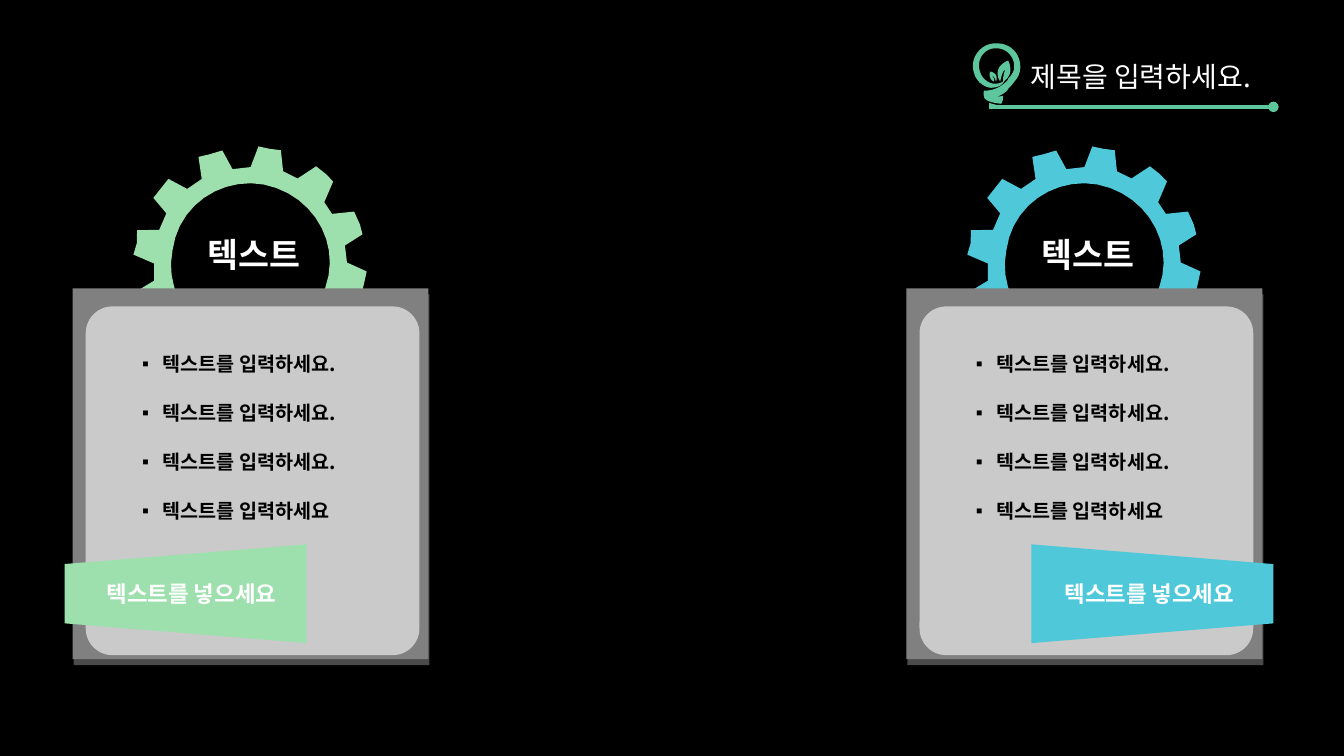
from lxml.etree import SubElement
from pptx import Presentation
from pptx.dml.color import RGBColor
from pptx.enum.shapes import MSO_CONNECTOR, MSO_SHAPE
from pptx.enum.text import MSO_ANCHOR, MSO_AUTO_SIZE, PP_ALIGN
from pptx.oxml.ns import qn
from pptx.util import Emu, Pt

EMU_PER_PX = 9144  # 100 px to the inch
SLIDE_SIZE = (1333, 750)
FONT = "Noto Sans CJK KR"
BLACK, WHITE, GREY, BULB_GREEN = "000000", "FFFFFF", "808080", "5EC69C"

TITLE = "제목을 입력하세요."
HEADING = "텍스트"
BULLETS = ["텍스트를 입력하세요."] * 3 + ["텍스트를 입력하세요"]
RIBBON = "텍스트를 넣으세요"

# Places inside a panel are those of the left one; shift moves the right one.
PANELS = [
    {"shift": 0, "color": "9DE0AD", "ribbon_left": 135, "ribbon_turn": 90, "label_left": 63},
    {"shift": 827, "color": "4FC9D9", "ribbon_left": 267, "ribbon_turn": 270, "label_left": 186},
]

GEAR_TEETH = [
    (209, 371), (222, 372), (233, 376), (243, 356), (258, 355), (270, 374), (280, 371),
    (291, 369), (290, 347), (304, 338), (322, 349), (330, 340), (339, 331), (327, 315),
    (335, 299), (356, 300), (360, 287), (363, 276), (344, 266), (343, 249), (361, 239),
    (359, 229), (354, 216), (332, 217), (325, 205), (335, 185), (328, 177), (319, 169),
    (300, 180), (286, 172), (285, 151), (274, 149), (263, 146), (254, 166), (236, 167),
    (227, 148), (214, 151), (203, 153), (205, 175), (190, 184), (172, 173), (164, 182),
    (156, 191), (168, 207), (160, 223), (138, 222), (137, 235), (133, 246), (153, 256),
    (152, 273), (135, 282), (138, 293), (141, 306), (162, 305), (172, 317), (160, 337),
    (169, 345), (178, 353), (195, 342), (210, 349),
]
# Curved outlines: a start point, then two control points and an end point per curve.
GEAR_HOLE = ((172, 244), [
    (180, 200, 224, 174, 266, 184), (309, 195, 335, 237, 325, 278),
    (314, 322, 273, 348, 229, 338), (187, 327, 161, 285, 172, 244)])
BULB_PARTS = [
    # small leaf
    ((986, 81), [(986, 81, 980, 79, 982, 71), (982, 71, 991, 72, 988, 81),
                 (988, 81, 986, 75, 984, 75), (984, 75, 987, 79, 986, 81)]),
    # large leaf
    ((995, 81), [(995, 81, 1007, 75, 1000, 60), (1000, 60, 983, 66, 992, 81),
                 (992, 81, 994, 70, 997, 69), (997, 69, 994, 78, 995, 81)]),
    # glass
    ((1006, 81), [
        (1010, 77, 1012, 72, 1012, 66), (1012, 53, 1002, 43, 989, 43),
        (976, 42, 965, 53, 965, 65), (965, 71, 967, 77, 971, 81),
        (971, 82, 971, 82, 972, 82), (972, 82, 978, 88, 985, 87),
        (996, 86, 997, 78, 997, 78), (997, 78, 996, 82, 989, 83),
        (981, 84, 976, 78, 976, 78), (976, 78, 976, 78, 975, 77),
        (973, 74, 971, 70, 971, 65), (971, 55, 979, 47, 989, 48),
        (998, 48, 1006, 56, 1006, 66), (1006, 71, 1003, 75, 1000, 78),
        (1000, 79, 999, 80, 998, 81), (994, 85, 987, 90, 976, 90),
        (976, 90, 975, 95, 977, 98), (977, 98, 987, 100, 999, 90),
        (999, 89, 1000, 89, 1000, 88), (1002, 86, 1005, 83, 1006, 81)]),
    # socket
    ((976, 90), [(976, 90, 986, 98, 995, 95), (995, 95, 995, 101, 993, 103),
                 (993, 103, 980, 102, 977, 98), (977, 98, 975, 95, 976, 90)]),
    # tip
    ((981, 102), [(981, 102, 989, 105, 992, 104), (992, 104, 991, 108, 986, 107),
                  (980, 107, 981, 102, 981, 102)]),
]


def px(length):
    return Emu(round(length * EMU_PER_PX))


def rgb(color):
    return RGBColor.from_string(color)


def trace(start, curves, steps=10):
    """Return the points along a chain of cubic Bezier curves."""
    points = [start]
    for x1, y1, x2, y2, x3, y3 in curves:
        x0, y0 = points[-1]
        for step in range(1, steps + 1):
            t = step / steps
            a, b, c, d = (1 - t) ** 3, 3 * t * (1 - t) ** 2, 3 * t * t * (1 - t), t ** 3
            points.append((a * x0 + b * x1 + c * x2 + d * x3,
                           a * y0 + b * y1 + c * y2 + d * y3))
    return points


def paint(shape, color, opacity=100):
    shape.shadow.inherit = False
    shape.fill.solid()
    shape.fill.fore_color.rgb = rgb(color)
    shape.line.fill.background()
    if opacity < 100:
        color_element = shape.fill._xPr.find(qn("a:solidFill"))[0]
        SubElement(color_element, qn("a:alpha"), val=str(opacity * 1000))


def add_outline(slide, contours, color, shift=0):
    contours = [[(px(x + shift), px(y)) for x, y in contour] for contour in contours]
    builder = slide.shapes.build_freeform(*contours[0][0], scale=1.0)
    builder.add_line_segments(contours[0][1:], close=True)
    for contour in contours[1:]:
        builder.move_to(*contour[0])
        builder.add_line_segments(contour[1:], close=True)
    shape = builder.convert_to_shape()
    paint(shape, color)
    return shape


def add_block(slide, preset, box, color, opacity=100):
    shape = slide.shapes.add_shape(preset, *map(px, box))
    paint(shape, color, opacity)
    return shape


def place(shape, box):
    shape.left, shape.top, shape.width, shape.height = map(px, box)


def write(paragraph, text, size, color, bold):
    run = paragraph.add_run()
    run.text = text
    run.font.size = Pt(size)
    run.font.bold = bold
    run.font.name = FONT
    run.font.color.rgb = rgb(color)
    SubElement(run._r.get_or_add_rPr(), qn("a:ea"), typeface=FONT)


def add_label(slide, box, text, size):
    frame = slide.shapes.add_textbox(*map(px, box)).text_frame
    frame.word_wrap = True
    frame.vertical_anchor = MSO_ANCHOR.MIDDLE
    frame.paragraphs[0].alignment = PP_ALIGN.CENTER
    write(frame.paragraphs[0], text, size, WHITE, True)


def fill_list(body, box):
    place(body, box)
    frame = body.text_frame
    frame.word_wrap = True
    frame.auto_size = MSO_AUTO_SIZE.NONE
    for index, text in enumerate(BULLETS):
        paragraph = frame.add_paragraph() if index else frame.paragraphs[0]
        paragraph.line_spacing = 1.5
        paragraph.space_before = Pt(10 if index else 0)
        properties = paragraph._p.get_or_add_pPr()
        properties.set("marL", str(px(20)))
        properties.set("indent", str(-px(20)))
        SubElement(properties, qn("a:buChar"), char="▪")
        write(paragraph, text, 14, BLACK, True)


def add_panel(slide, body, shift, color, ribbon_left, ribbon_turn, label_left):
    gear = add_outline(slide, [GEAR_TEETH, trace(*GEAR_HOLE)], color, shift)
    gear.rotation = 356.7
    add_block(slide, MSO_SHAPE.RECTANGLE, (72 + shift, 286, 353, 368), GREY)
    add_block(slide, MSO_SHAPE.RECTANGLE, (73 + shift, 292, 353, 368), GREY, 59)
    card = add_block(slide, MSO_SHAPE.ROUNDED_RECTANGLE, (85 + shift, 304, 331, 346), WHITE, 59)
    card.adjustments[0] = 0.08
    ribbon = add_block(slide, MSO_SHAPE.FLOWCHART_MANUAL_OPERATION,
                       (ribbon_left + shift, 469, 98, 240), color)
    ribbon.rotation = ribbon_turn
    slide.shapes._spTree.append(body._element)  # bring the list above the card
    fill_list(body, (131 + shift, 332, 248, 208))
    add_label(slide, (label_left + shift, 559, 254, 60), RIBBON, 16)
    add_label(slide, (125 + shift, 222, 254, 60), HEADING, 24)


def add_title(slide):
    title = slide.shapes.title
    place(title, (1012, 54, 261, 44))
    frame = title.text_frame
    frame.word_wrap = False
    frame.auto_size = MSO_AUTO_SIZE.SHAPE_TO_FIT_TEXT
    frame.vertical_anchor = MSO_ANCHOR.TOP
    frame.paragraphs[0].alignment = PP_ALIGN.LEFT
    write(frame.paragraphs[0], TITLE, 20, WHITE, False)


def add_title_line(slide):
    line = slide.shapes.add_connector(MSO_CONNECTOR.STRAIGHT, px(981), px(106), px(1263), px(106))
    line.line.color.rgb = rgb(BULB_GREEN)
    line.line.width = Pt(2.5)
    SubElement(line.line._get_or_add_ln(), qn("a:tailEnd"), type="oval")
    SubElement(line._element.spPr, qn("a:effectLst"))


def main():
    presentation = Presentation()
    presentation.slide_width, presentation.slide_height = map(px, SLIDE_SIZE)
    slide = presentation.slides.add_slide(presentation.slide_layouts.get_by_name("Two Content"))
    slide.background.fill.solid()
    slide.background.fill.fore_color.rgb = rgb(BLACK)
    bodies = [slide.placeholders[1], slide.placeholders[2]]
    add_title(slide)
    for part in BULB_PARTS:
        add_outline(slide, [trace(*part)], BULB_GREEN)
    for body, panel in zip(bodies, PANELS):
        add_panel(slide, body, **panel)
    add_title_line(slide)
    presentation.save("out.pptx")


if __name__ == "__main__":
    main()
